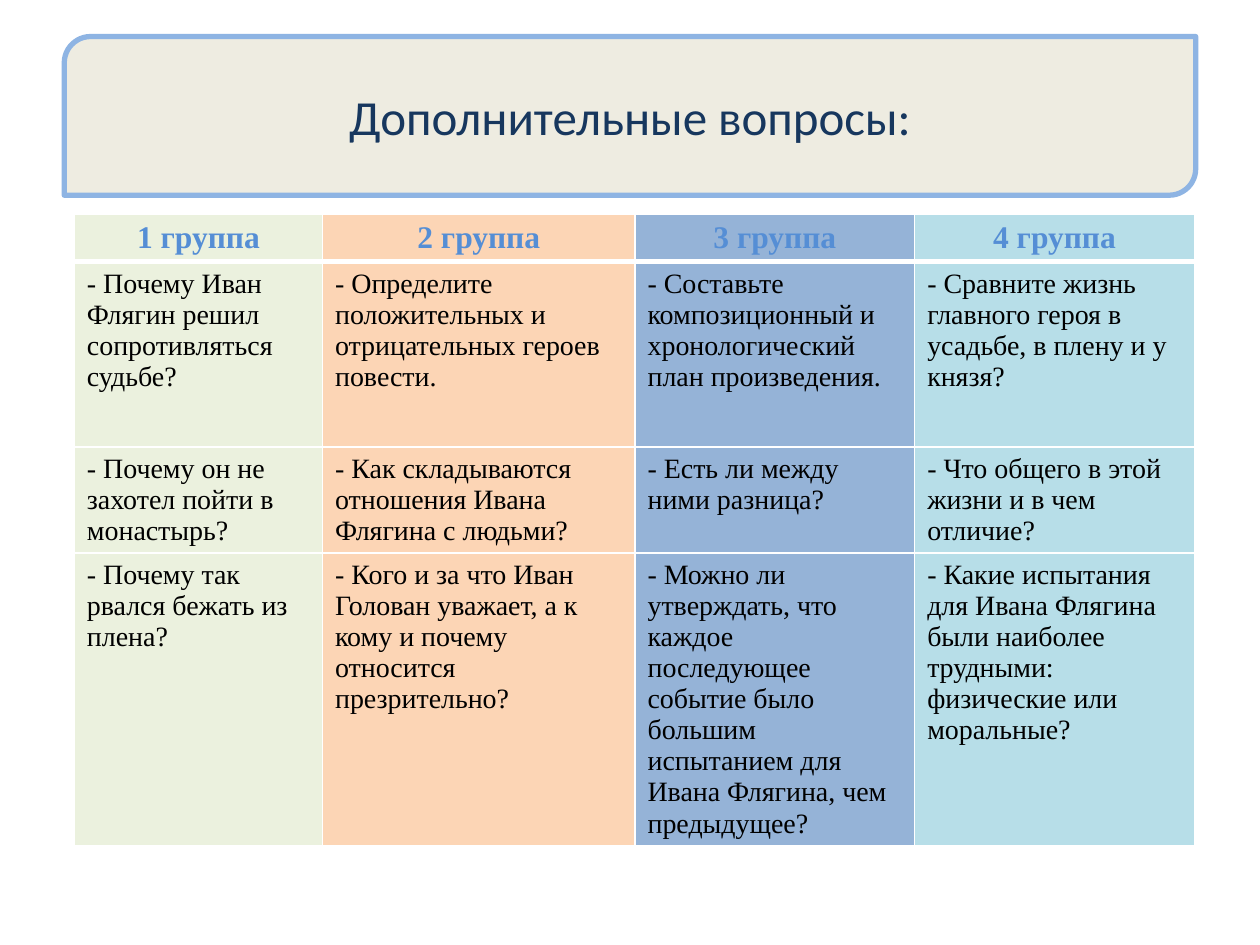
from dataclasses import dataclass

from lxml.etree import SubElement
from pptx import Presentation
from pptx.dml.color import RGBColor
from pptx.enum.shapes import MSO_SHAPE
from pptx.enum.text import MSO_ANCHOR, PP_ALIGN
from pptx.oxml.ns import qn
from pptx.slide import Slide
from pptx.table import _Cell
from pptx.util import Inches, Pt

WIDTH, HEIGHT = Inches(10), Inches(7.5)
COLORS = {
    "panel": "EEECE1", "outline": "8EB4E3", "title": "17375E",
    "heading": "558ED5", "body": "000000", "border": "FFFFFF",
    "green": "EBF1DE", "orange": "FCD5B5", "blue": "95B3D7", "aqua": "B7DEE8",
}
ROW_HEIGHTS = (4.13, 19.6, 10.27, 28.93)


@dataclass(frozen=True)
class Frame:
    """A rectangle in percent of the slide's width and height."""
    left: float
    top: float
    width: float
    height: float

    def box(self) -> tuple[int, int, int, int]:
        """Return left, top, width and height as lengths."""
        return (across(self.left), down(self.top),
                across(self.width), down(self.height))


@dataclass(frozen=True)
class Group:
    """One column of the table: a group of pupils and its questions."""
    heading: str
    color: str
    width: float
    questions: tuple[str, ...]


TITLE_FRAME = Frame(5.1, 3.87, 89.8, 16.8)
TABLE_FRAME = Frame(5.9, 22.67, 88.9, sum(ROW_HEIGHTS))
GROUPS = (
    Group("1 группа", "green", 19.7, (
        "- Почему Иван Флягин решил сопротивляться судьбе?",
        "- Почему он не захотел пойти в монастырь?",
        "- Почему так рвался бежать из плена?")),
    Group("2 группа", "orange", 24.8, (
        "- Определите положительных и отрицательных героев повести.",
        "- Как складываются отношения Ивана Флягина с людьми?",
        "- Кого и за что Иван Голован уважает, а к кому и почему относится презрительно?")),
    Group("3 группа", "blue", 22.2, (
        "- Составьте композиционный и хронологический план произведения.",
        "- Есть ли между ними разница?",
        "- Можно ли утверждать, что каждое последующее событие было большим "
        "испытанием для Ивана Флягина, чем предыдущее?")),
    Group("4 группа", "aqua", 22.2, (
        "- Сравните жизнь главного героя в усадьбе, в плену и у князя?",
        "- Что общего в этой жизни и в чем отличие?",
        "- Какие испытания для Ивана Флягина были наиболее трудными: "
        "физические или моральные?")),
)


def across(percent: float) -> int:
    """Turn a percentage of the slide's width into a length."""
    return round(WIDTH * percent / 100)


def down(percent: float) -> int:
    """Turn a percentage of the slide's height into a length."""
    return round(HEIGHT * percent / 100)


def color(name: str) -> RGBColor:
    """Look up a named colour."""
    return RGBColor.from_string(COLORS[name])


def draw_title(slide: Slide, text: str) -> None:
    """Draw the panel with the title placeholder in front of it."""
    panel = slide.shapes.add_shape(MSO_SHAPE.ROUND_2_DIAG_RECTANGLE, *TITLE_FRAME.box())
    panel.shadow.inherit = False
    panel.fill.solid()
    panel.fill.fore_color.rgb = color("panel")
    panel.line.color.rgb = color("outline")
    panel.line.width = Pt(3)
    title = slide.shapes.title
    panel._element.addnext(title._element)
    title.left, title.top, title.width, title.height = TITLE_FRAME.box()
    title.text_frame.text = text
    title.text_frame.vertical_anchor = MSO_ANCHOR.MIDDLE
    paragraph = title.text_frame.paragraphs[0]
    paragraph.alignment = PP_ALIGN.CENTER
    paragraph.font.name = "Calibri"
    paragraph.font.size = Pt(28)
    paragraph.font.color.rgb = color("title")


def draw_borders(cell: _Cell, top: float, bottom: float) -> None:
    """Give a cell white borders, with their widths in points."""
    properties = cell._tc.get_or_add_tcPr()
    for side, width in (("L", 1), ("R", 1), ("T", top), ("B", bottom)):
        line = SubElement(properties, qn(f"a:ln{side}"), w=str(Pt(width)))
        fill = SubElement(line, qn("a:solidFill"))
        SubElement(fill, qn("a:srgbClr"), val=COLORS["border"])


def draw_cell(cell: _Cell, text: str, fill: str, row: int) -> None:
    """Write and format one cell, the first row being the heading."""
    is_heading = row == 0
    draw_borders(cell, top=3 if row == 1 else 1, bottom=3 if is_heading else 1)
    cell.fill.solid()
    cell.fill.fore_color.rgb = color(fill)
    cell.text = text
    paragraph = cell.text_frame.paragraphs[0]
    paragraph.alignment = PP_ALIGN.CENTER if is_heading else PP_ALIGN.LEFT
    paragraph.font.name = "Times New Roman"
    paragraph.font.size = Pt(18 if is_heading else 16)
    paragraph.font.bold = is_heading
    paragraph.font.color.rgb = color("heading" if is_heading else "body")


def draw_table(slide: Slide, groups: tuple[Group, ...]) -> None:
    """Draw the table of questions, one column for each group."""
    table = slide.shapes.add_table(
        len(ROW_HEIGHTS), len(groups), *TABLE_FRAME.box()).table
    for row, height in zip(table.rows, ROW_HEIGHTS):
        row.height = down(height)
    for column, group in enumerate(groups):
        table.columns[column].width = across(group.width)
        for row, text in enumerate((group.heading, *group.questions)):
            draw_cell(table.cell(row, column), text, group.color, row)


def main() -> None:
    """Build the slide and save it."""
    presentation = Presentation()
    presentation.slide_width, presentation.slide_height = WIDTH, HEIGHT
    slide = presentation.slides.add_slide(presentation.slide_layouts[5])
    draw_title(slide, "Дополнительные вопросы:")
    draw_table(slide, GROUPS)
    presentation.save("out.pptx")


if __name__ == "__main__":
    main()
